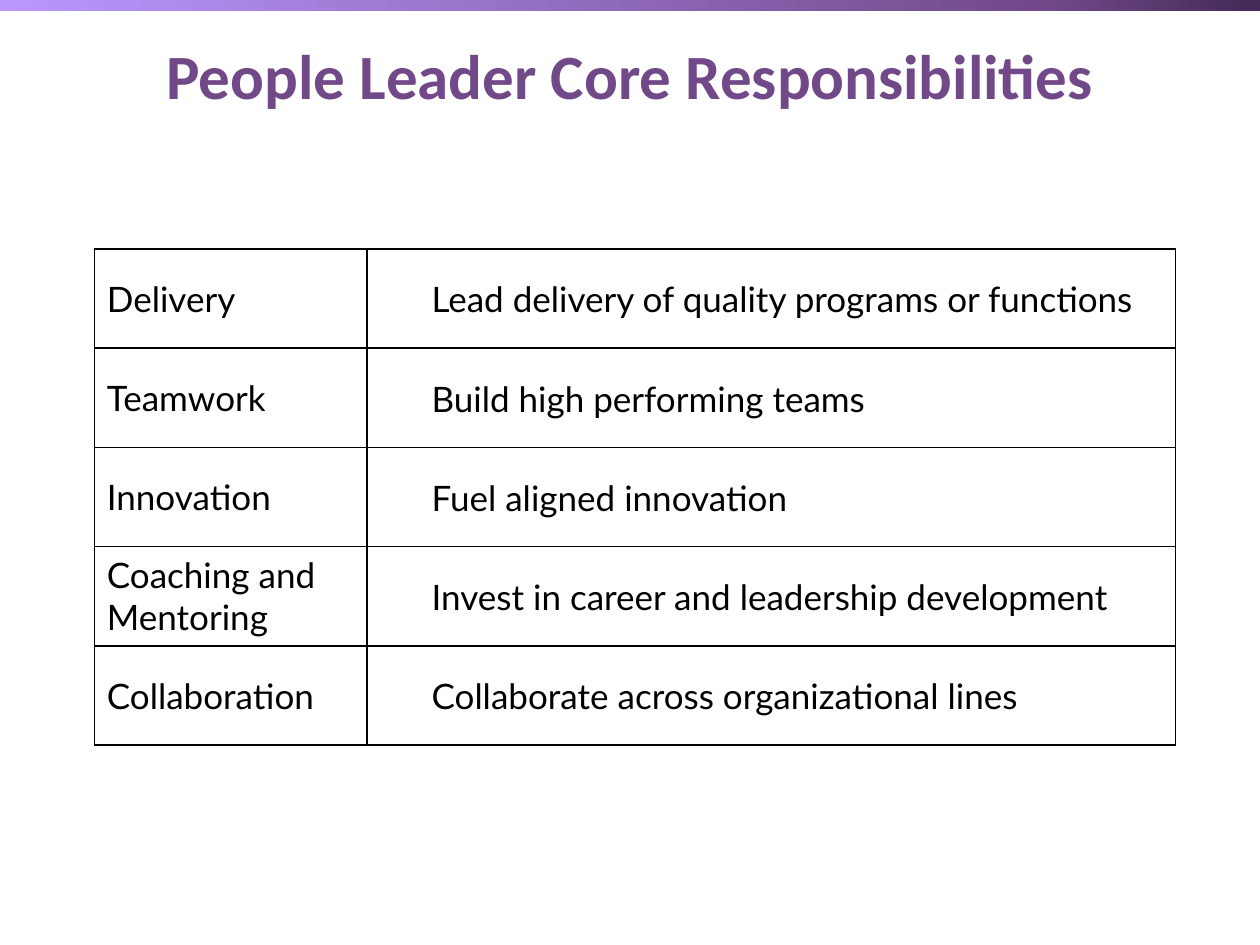
from copy import deepcopy

from lxml.etree import SubElement
from pptx import Presentation
from pptx.dml.color import RGBColor
from pptx.enum.shapes import MSO_SHAPE
from pptx.enum.text import MSO_ANCHOR, PP_ALIGN
from pptx.oxml.ns import qn
from pptx.util import Cm, Pt

BLACK = RGBColor(0x00, 0x00, 0x00)
DARK_PURPLE = RGBColor(0x44, 0x2A, 0x58)
PURPLE = RGBColor(0x71, 0x49, 0x89)
LILAC = RGBColor(0xBA, 0x97, 0xFF)

TITLE_FONT = {"name": "Calibri", "size": Pt(36), "bold": True}
CELL_FONT = {"name": "Lato", "size": Pt(20), "bold": False}
DUTY_MARGINS = {"margin_left": Cm(0.03), "margin_top": Cm(0.03),
                "margin_right": Cm(0.03), "margin_bottom": Cm(0)}
BAR_STOPS = [(0, DARK_PURPLE), (0.17, PURPLE), (1, LILAC)]

RESPONSIBILITIES = [
    ("Delivery", "Lead delivery of quality programs or functions"),
    ("Teamwork", "Build high performing teams"),
    ("Innovation", "Fuel aligned innovation"),
    ("Coaching and Mentoring", "Invest in career and leadership development"),
    ("Collaboration", "Collaborate across organizational lines"),
]


def apply_format(target, values):
    for name, value in values.items():
        setattr(target, name, value)


def add_top_bar(page, left, top, width, height):
    bar = page.shapes.add_shape(MSO_SHAPE.RECTANGLE, left, top, width, height)
    bar.shadow.inherit = False
    bar.line.fill.background()
    bar.fill.gradient()
    bar.fill.gradient_angle = 180
    stop_list = bar._element.spPr.find(".//" + qn("a:gsLst"))
    stop_list.insert(1, deepcopy(stop_list[0]))
    for stop, (position, color) in zip(bar.fill.gradient_stops, BAR_STOPS):
        stop.position = position
        stop.color.rgb = color
    page.shapes._spTree.insert(2, bar._element)


def place_title(page, text, left, top, width, height):
    title = page.shapes.title
    apply_format(title, {"left": left, "top": top, "width": width, "height": height})
    title.text_frame.text = text
    title.text_frame.vertical_anchor = MSO_ANCHOR.MIDDLE
    para = title.text_frame.paragraphs[0]
    para.alignment = PP_ALIGN.CENTER
    apply_format(para.font, TITLE_FONT)
    para.font.color.rgb = PURPLE


def add_borders(cell):
    properties = cell._tc.get_or_add_tcPr()
    for index, side in enumerate(("a:lnL", "a:lnR", "a:lnT", "a:lnB")):
        line = SubElement(properties, qn(side), w=str(Pt(1)))
        fill = SubElement(line, qn("a:solidFill"))
        SubElement(fill, qn("a:srgbClr"), val=str(BLACK))
        properties.insert(index, line)


def fill_cell(cell, text):
    cell.text = text
    cell.vertical_anchor = MSO_ANCHOR.MIDDLE
    cell.fill.background()
    add_borders(cell)
    span = cell.text_frame.paragraphs[0].runs[0]
    apply_format(span.font, CELL_FONT)
    span.font.color.rgb = BLACK


def indent_duty(cell):
    apply_format(cell, DUTY_MARGINS)
    para = cell.text_frame.paragraphs[0]
    para.level = 1
    properties = para._p.get_or_add_pPr()
    properties.set("marL", str(Cm(1.27)))
    properties.set("indent", "0")


def add_responsibility_table(page, left, top, width, height):
    table = page.shapes.add_table(len(RESPONSIBILITIES), 2, left, top, width, height).table
    apply_format(table, {"first_row": False, "horz_banding": False})
    table.columns[0].width = Cm(5.5)
    table.columns[1].width = width - Cm(5.5)
    for row, texts in enumerate(RESPONSIBILITIES):
        for column, text in enumerate(texts):
            fill_cell(table.cell(row, column), text)
        indent_duty(table.cell(row, 1))


def main():
    deck = Presentation()
    deck.slide_width, deck.slide_height = Cm(25.4), Cm(19.05)
    page = deck.slides.add_slide(deck.slide_layouts[5])
    add_top_bar(page, Cm(-0.05), Cm(-0.05), Cm(25.45), Cm(0.28))
    place_title(page, "People Leader Core Responsibilities",
                Cm(0.7), Cm(0.2), Cm(24), Cm(2.6))
    add_responsibility_table(page, Cm(1.9), Cm(5.02), Cm(21.8), Cm(10))
    deck.save("out.pptx")


if __name__ == "__main__":
    main()
